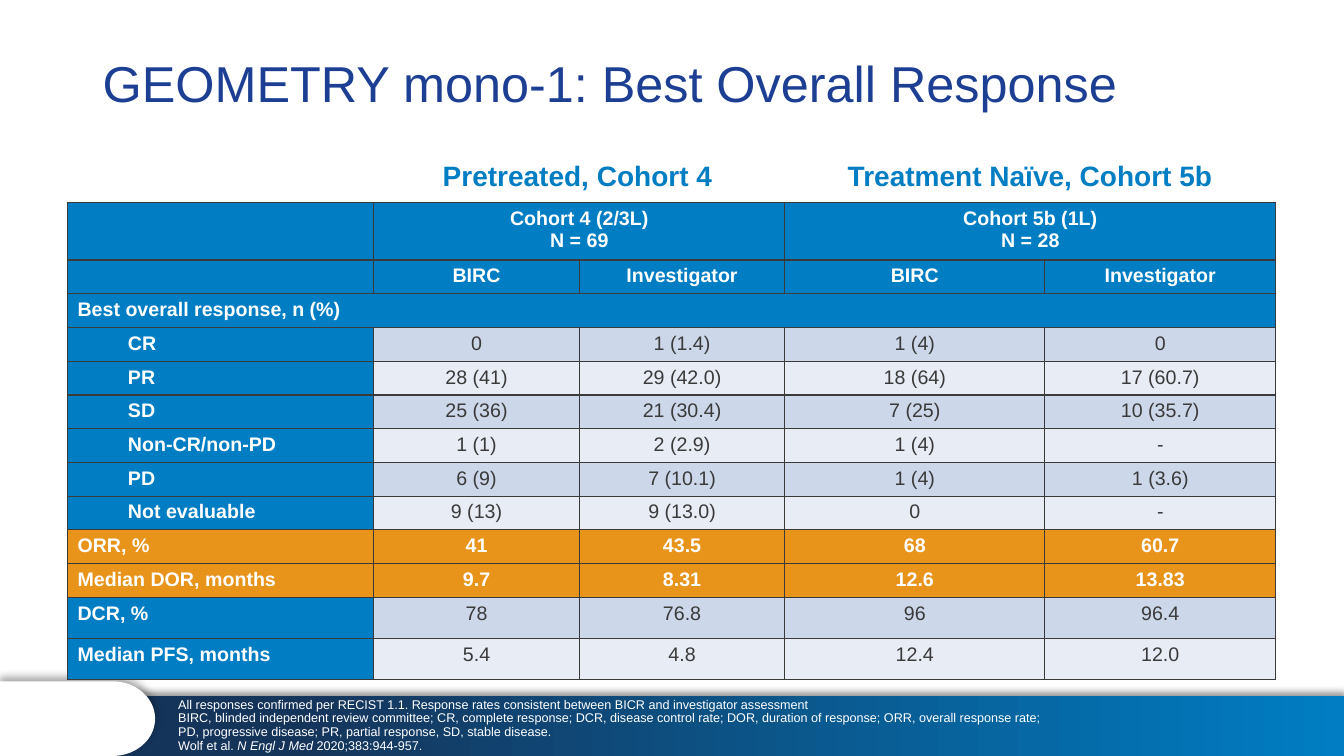
import math
from dataclasses import dataclass

from lxml import etree
from pptx import Presentation
from pptx import util as u
from pptx.dml.color import RGBColor
from pptx.enum import shapes, text
from pptx.oxml.ns import qn


@dataclass(frozen=True)
class Theme:
    font: str = "Arial"
    navy: str = "1C3F93"
    deep: str = "15345A"
    blue: str = "007DC3"
    orange: str = "E8931A"
    ink: str = "3A3A3A"
    white: str = "FFFFFF"
    band_dark: str = "CCD7E9"
    band_light: str = "E7ECF5"
    title_size: int = 36
    heading_size: int = 20
    table_size: int = 14
    note_size: int = 9


THEME = Theme()
CENTER = text.PP_ALIGN.CENTER
LEFT = text.PP_ALIGN.LEFT


def write(frame, wording, size, color, bold=False, align=LEFT, spacing=1.0, indent=0):
    for number, line in enumerate(wording.split("\n")):
        paragraph = frame.add_paragraph() if number else frame.paragraphs[0]
        paragraph.alignment = align
        paragraph.line_spacing = spacing
        if indent:
            paragraph.level = 1
            properties = paragraph._p.get_or_add_pPr()
            properties.set("marL", str(u.Cm(indent)))
            properties.set("indent", "0")
        if not line:
            etree.SubElement(paragraph._p, qn("a:endParaRPr"), sz=str(size * 100))
            continue
        for part, words in enumerate(line.split("*")):
            run = paragraph.add_run()
            run.text = words
            run.font.name = THEME.font
            run.font.size = u.Pt(size)
            run.font.bold = bold
            run.font.italic = part % 2 == 1
            run.font.color.rgb = RGBColor.from_string(color)


class ResponseSlide:
    def __init__(self, deck, theme):
        self.theme = theme
        self.slide = deck.slides.add_slide(deck.slide_layouts[6])

    def upward_shadow(self, shape, blur, alpha):
        shape.line.fill.background()
        shape.shadow.inherit = False
        effects = shape._element.spPr.find(qn("a:effectLst"))
        shadow = etree.SubElement(
            effects, qn("a:outerShdw"), blurRad=str(u.Pt(blur)), dist=str(u.Pt(3)),
            dir=str(270 * 60000), algn="b", rotWithShape="0")
        tint = etree.SubElement(shadow, qn("a:srgbClr"), val="000000")
        etree.SubElement(tint, qn("a:alpha"), val=str(alpha * 1000))

    def footer_band(self, left, top, width, height):
        band = self.slide.shapes.add_shape(
            shapes.MSO_SHAPE.RECTANGLE, u.Cm(left), u.Cm(top), u.Cm(width), u.Cm(height))
        band.fill.gradient()
        band.fill.gradient_angle = 0
        ends = ((0.14, self.theme.deep), (1, self.theme.blue))
        for stop, (position, color) in zip(band.fill.gradient_stops, ends):
            stop.position = position
            stop.color.rgb = RGBColor.from_string(color)
        self.upward_shadow(band, 4, 40)

    def footer_tab(self, straight, middle, radius_x, radius_y, steps=40):
        curve = []
        for step in range(steps + 1):
            angle = math.pi * (step / steps - 0.5)
            curve.append((u.Cm(straight + radius_x * math.cos(angle)),
                          u.Cm(middle + radius_y * math.sin(angle))))
        outline = self.slide.shapes.build_freeform(0, u.Cm(middle - radius_y))
        outline.add_line_segments(curve + [(0, u.Cm(middle + radius_y))], close=True)
        tab = outline.convert_to_shape()
        tab.fill.solid()
        tab.fill.fore_color.rgb = RGBColor.from_string(self.theme.white)
        self.upward_shadow(tab, 6, 34)

    def label(self, wording, left, top, width, height, anchor, **style):
        box = self.slide.shapes.add_textbox(u.Cm(left), u.Cm(top), u.Cm(width), u.Cm(height))
        box.text_frame.word_wrap = True
        box.text_frame.vertical_anchor = anchor
        write(box.text_frame, wording, spacing=0.9, **style)

    def cell(self, cell, wording, fill, **style):
        properties = cell._tc.get_or_add_tcPr()
        for side in ("lnL", "lnR", "lnT", "lnB"):
            border = etree.SubElement(properties, qn(f"a:{side}"), w=str(u.Pt(1)))
            solid = etree.SubElement(border, qn("a:solidFill"))
            etree.SubElement(solid, qn("a:srgbClr"), val=self.theme.ink)
        cell.fill.solid()
        cell.fill.fore_color.rgb = RGBColor.from_string(fill)
        write(cell.text_frame, wording, self.theme.table_size, **style)

    def table(self, rows, left, top, widths, heights, merges, headers, indented, highlighted):
        theme = self.theme
        grid = self.slide.shapes.add_table(
            len(rows), len(widths), u.Cm(left), u.Cm(top),
            u.Cm(sum(widths)), u.Cm(sum(heights))).table
        grid.first_row = grid.horz_banding = False
        for column, width in zip(grid.columns, widths):
            column.width = u.Cm(width)
        for row, height in zip(grid.rows, heights):
            row.height = u.Cm(height)
        for row, first, last in merges:
            grid.cell(row, first).merge(grid.cell(row, last))
        for r, values in enumerate(rows):
            for c, value in enumerate(values):
                strong = c == 0 or r in headers or r in highlighted
                if r in highlighted:
                    fill = theme.orange
                elif strong:
                    fill = theme.blue
                else:
                    fill = theme.band_dark if r % 2 else theme.band_light
                self.cell(grid.cell(r, c), value, fill, bold=strong,
                          color=theme.white if strong else theme.ink,
                          align=CENTER if c else LEFT,
                          indent=1.27 if c == 0 and r in indented else 0)


RESPONSES = [
    ("", "Cohort 4 (2/3L)\nN = 69", "", "Cohort 5b (1L)\nN = 28", ""),
    ("", "BIRC", "Investigator", "BIRC", "Investigator"),
    ("Best overall response, n (%)", "", "", "", ""),
    ("CR", "0", "1 (1.4)", "1 (4)", "0"),
    ("PR", "28 (41)", "29 (42.0)", "18 (64)", "17 (60.7)"),
    ("SD", "25 (36)", "21 (30.4)", "7 (25)", "10 (35.7)"),
    ("Non-CR/non-PD", "1 (1)", "2 (2.9)", "1 (4)", "-"),
    ("PD", "6 (9)", "7 (10.1)", "1 (4)", "1 (3.6)"),
    ("Not evaluable", "9 (13)", "9 (13.0)", "0", "-"),
    ("ORR, %", "41", "43.5", "68", "60.7"),
    ("Median DOR, months", "9.7", "8.31", "12.6", "13.83"),
    ("DCR, %", "78", "76.8", "96", "96.4"),
    ("Median PFS, months", "5.4", "4.8", "12.4", "12.0"),
]

FOOTNOTES = "\n".join([
    "All responses confirmed per RECIST 1.1. Response rates consistent between BICR "
    "and investigator assessment",
    "BIRC, blinded independent review committee; CR, complete response; DCR, disease "
    "control rate; DOR, duration of response; ORR, overall response rate;",
    "PD, progressive disease; PR, partial response, SD, stable disease.",
    "Wolf et al. *N Engl J Med *2020;383:944-957.",
])


def main():
    deck = Presentation()
    deck.slide_width, deck.slide_height = u.Cm(33.87), u.Cm(19.05)
    page = ResponseSlide(deck, THEME)
    page.footer_band(2.95, 17.53, 30.92, 1.52)
    page.footer_tab(straight=2.84, middle=18.11, radius_x=1.07, radius_y=0.94)
    page.label("GEOMETRY mono-1: Best Overall Response", 2.34, 1.02, 29.21, 2.29,
               text.MSO_ANCHOR.MIDDLE, size=THEME.title_size, color=THEME.navy)
    for cohort, left, width in (("Pretreated, Cohort 4", 9.35, 10.41),
                                ("Treatment Naïve, Cohort 5b", 19.76, 12.4)):
        page.label(cohort, left, 3.88, width, 1.09, text.MSO_ANCHOR.BOTTOM,
                   size=THEME.heading_size, color=THEME.blue, bold=True, align=CENTER)
    page.label(FOOTNOTES, 4.24, 17.86, 27.94, 1.24, text.MSO_ANCHOR.BOTTOM,
               size=THEME.note_size, color=THEME.white)
    page.table(RESPONSES, 1.7, 5.11, widths=[7.72, 5.18, 5.18, 6.55, 5.82],
               heights=[1.44] + [0.85] * 10 + [1.04] * 2,
               merges=[(0, 1, 2), (0, 3, 4), (2, 0, 4)],
               headers=range(3), indented=range(3, 9), highlighted=(9, 10))
    deck.save("out.pptx")


if __name__ == "__main__":
    main()
